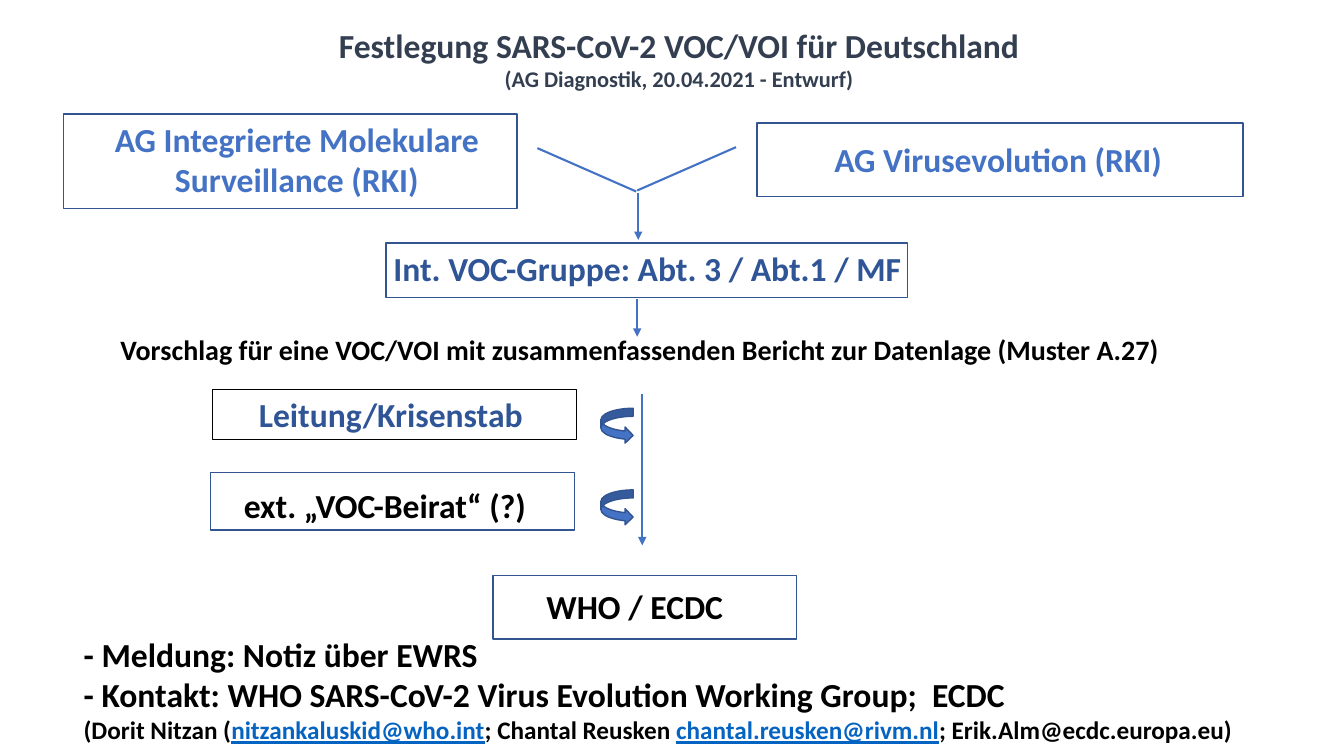
"""Build the slide on how SARS-CoV-2 VOC/VOI are set for Germany."""
from lxml import etree
from pptx import Presentation
from pptx.dml.color import RGBColor
from pptx.enum.shapes import MSO_CONNECTOR, MSO_SHAPE
from pptx.enum.text import MSO_ANCHOR, MSO_AUTO_SIZE, PP_ALIGN
from pptx.oxml.ns import qn
from pptx.util import Inches, Pt

LINE = MSO_CONNECTOR.STRAIGHT
RECT, CURVE = MSO_SHAPE.RECTANGLE, MSO_SHAPE.CURVED_LEFT_ARROW
TOP, MID = MSO_ANCHOR.TOP, MSO_ANCHOR.MIDDLE
NONE = MSO_AUTO_SIZE.NONE
LEFT, CENTER = PP_ALIGN.LEFT, PP_ALIGN.CENTER
BLUE, EDGE, DARK, GREY = "4472C4", "325491", "2F5597", "333F50"
BLACK, WHITE, LINK = "000000", "FFFFFF", "0563C1"


def rgb(code):
    return RGBColor.from_string(code)


def write(shape, rows, align=CENTER, anchor=TOP):
    frame = shape.text_frame
    form = {"word_wrap": True, "auto_size": NONE, "vertical_anchor": anchor}
    for key, value in form.items():
        setattr(frame, key, value)
    for num, row in enumerate(rows):
        para = frame.add_paragraph() if num else frame.paragraphs[0]
        form = {"alignment": align, "space_before": Pt(0), "line_spacing": 1.0}
        for key, value in form.items():
            setattr(para, key, value)
        for words, size, tint in row:
            run = para.add_run()
            run.text = words
            form = {"name": "Calibri", "size": Pt(size), "bold": True,
                    "underline": tint == LINK}
            for key, value in form.items():
                setattr(run.font, key, value)
            run.font.color.rgb = rgb(tint)


deck = Presentation()
deck.slide_width, deck.slide_height = Inches(13.33), Inches(7.5)
slide = deck.slides.add_slide(deck.slide_layouts[1])
shapes = slide.shapes

title, body = shapes.title, slide.placeholders[1]
places = [(title, (0.22, 0.2, 13.03, 0.77)), (body, (0.73, 6.24, 12.19, 1.21))]
for holder, place in places:
    for key, value in zip(("left", "top", "width", "height"), place):
        setattr(holder, key, Inches(value))
write(title, [
    [("Festlegung SARS-CoV-2 VOC/VOI für Deutschland", 24, GREY)],
    [("(AG Diagnostik, 20.04.2021 - Entwurf)", 16, GREY)],
])
write(body, [
    [("- Meldung: Notiz über EWRS", 24, BLACK)],
    [("- Kontakt: WHO SARS-CoV-2 Virus Evolution Working Group;  ECDC", 24, BLACK)],
    [("(Dorit Nitzan (", 18, BLACK),
     ("nitzankaluskid@who.int", 18, LINK),
     ("; Chantal Reusken ", 18, BLACK),
     ("chantal.reusken@rivm.nl", 18, LINK),
     ("; Erik.Alm@ecdc.europa.eu)", 18, BLACK)],
], LEFT)
for para in body.text_frame.paragraphs:
    props = para._p.get_or_add_pPr()
    props.set("marL", "0")
    props.set("indent", "0")
    etree.SubElement(props, qn("a:buNone"))

forms = [
    (RECT, (0.63, 1.13, 4.5, 0.94), WHITE, EDGE, 1),
    (RECT, (7.51, 1.22, 4.82, 0.73), WHITE, EDGE, 1),
    (RECT, (3.83, 2.41, 5.17, 0.54), None, EDGE, 1),
    (RECT, (2.11, 3.86, 3.61, 0.5), None, BLACK, 0.75),
    (RECT, (2.09, 4.69, 3.61, 0.57), WHITE, EDGE, 1),
    (RECT, (4.89, 5.71, 3.01, 0.63), WHITE, EDGE, 1),
    (CURVE, (5.96, 4.05, 0.32, 0.35), BLUE, EDGE, 1),
    (CURVE, (5.96, 4.86, 0.32, 0.35), BLUE, EDGE, 1),
]
for kind, place, fill, edge, width in forms:
    shape = shapes.add_shape(kind, *map(Inches, place))
    shape.shadow.inherit = False
    shape.line.color.rgb = rgb(edge)
    shape.line.width = Pt(width)
    if fill:
        shape.fill.solid()
        shape.fill.fore_color.rgb = rgb(fill)
    else:
        shape.fill.background()
    if kind == CURVE:
        shape._element.spPr.find(qn("a:xfrm")).set("flipH", "1")
    if edge == BLACK:
        write(shape, [[("Leitung/Krisenstab ", 24, DARK)]], anchor=MID)

labels = [
    ("AG Integrierte Molekulare Surveillance (RKI)", (0.83, 1.13, 4.23, 0.91), 24, BLUE, CENTER),
    ("AG Virusevolution (RKI)", (7.4, 1.33, 5, 0.5), 24, BLUE, CENTER),
    ("Int. VOC-Gruppe: Abt. 3 / Abt.1 / MF", (3.18, 2.41, 6.48, 0.5), 24, DARK, CENTER),
    ("Vorschlag für eine VOC/VOI mit zusammenfassenden Bericht zur Datenlage (Muster A.27)",
     (1.05, 3.25, 10.59, 0.44), 20, BLACK, CENTER),
    ("ext. „VOC-Beirat“ (?)", (2.32, 4.76, 3.38, 0.5), 24, BLACK, LEFT),
    ("WHO / ECDC", (5.32, 5.76, 2.71, 0.5), 24, BLACK, LEFT),
]
for words, place, size, tint, align in labels:
    write(shapes.add_textbox(*map(Inches, place)), [[(words, size, tint)]], align)

links = [
    ((5.33, 1.47, 6.31, 1.9), False),
    ((7.3, 1.46, 6.32, 1.89), False),
    ((6.33, 1.91, 6.33, 2.38), True),
    ((6.32, 2.97, 6.32, 3.34), True),
    ((6.37, 3.91, 6.37, 5.41), True),
]
for ends, head in links:
    link = shapes.add_connector(LINE, *map(Inches, ends))
    link.line.color.rgb = rgb(BLUE)
    link.line.width = Pt(1.5)
    if head:
        etree.SubElement(link.line._get_or_add_ln(), qn("a:tailEnd"), type="triangle")
    etree.SubElement(link._element.spPr, qn("a:effectLst"))

deck.save("out.pptx")
